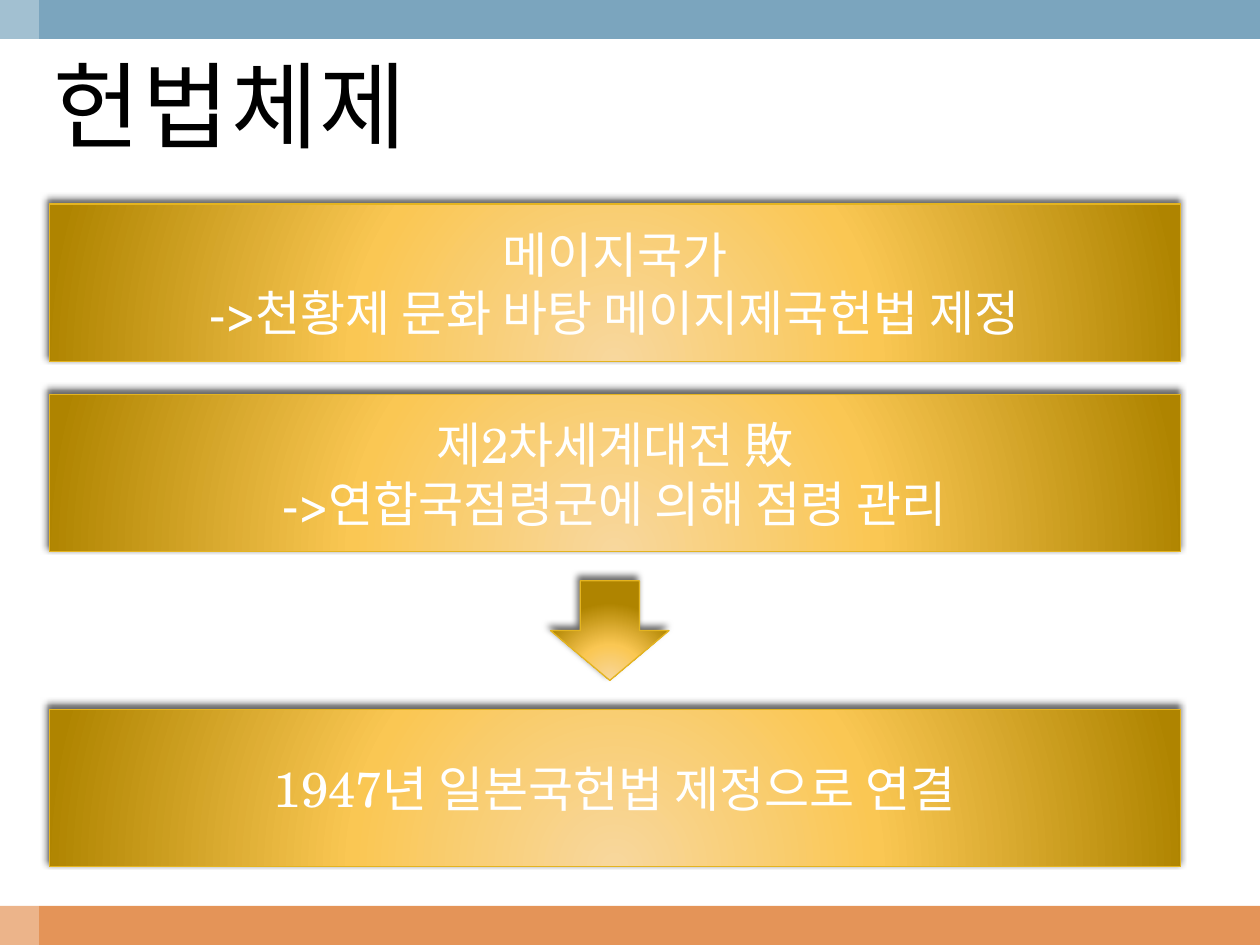
from lxml.etree import SubElement
from pptx import Presentation
from pptx.dml.color import RGBColor
from pptx.enum.shapes import MSO_SHAPE as Shape
from pptx.enum.text import MSO_ANCHOR as Anchor, PP_ALIGN as Align
from pptx.oxml import parse_xml
from pptx.oxml.ns import nsdecls, qn
from pptx.util import Inches, Pt

COLORS = {
    "top band": "7BA5BE", "bottom band": "E49458", "white": "FFFFFF",
    "title": "000000", "outline": "E4B420", "shadow": "000000",
    "glow": "F8D79D", "gold": "FAC753", "dark gold": "AF8400",
}
FONT = "TeX Gyre Schola"
COLUMNS, ROWS = 100, 75
CELL = Inches(0.1)
BAND = 3.1
PANEL_LEFT, PANEL_WIDTH, PANEL_HEIGHT = 3.9, 89.8, 12.5
PANELS = [
    (16.2, ["메이지국가", "->천황제 문화 바탕 메이지제국헌법 제정"]),
    (31.3, ["제2차세계대전 敗", "->연합국점령군에 의해 점령 관리"]),
    (56.3, ["1947년 일본국헌법 제정으로 연결"]),
]


def color(name):
    return RGBColor.from_string(COLORS[name])


def grid(*lengths):
    return [round(length * CELL) for length in lengths]


def add_band(slide, box, fill, opacity=100):
    band = slide.shapes.add_shape(Shape.RECTANGLE, *grid(*box))
    band.shadow.inherit = False
    band.fill.solid()
    band.fill.fore_color.rgb = color(fill)
    band.line.fill.background()
    if opacity < 100:
        tint = band.fill._xPr.find(".//" + qn("a:srgbClr"))
        SubElement(tint, qn("a:alpha"), val=str(opacity * 1000))


def add_golden(slide, kind, box):
    """Add a shape with a gradient rising from below its base and a soft shadow."""
    golden = slide.shapes.add_shape(kind, *grid(*box))
    golden.line.color.rgb = color("outline")
    golden.line.width = Pt(0.75)
    golden.shadow.inherit = False
    properties = golden._element.spPr
    stops = "".join(
        f'<a:gs pos="{percent * 1000}"><a:srgbClr val="{COLORS[name]}"/></a:gs>'
        for percent, name in [(0, "glow"), (46, "gold"), (100, "dark gold")])
    properties.find(qn("a:ln")).addprevious(parse_xml(
        f'<a:gradFill {nsdecls("a")} rotWithShape="1"><a:gsLst>{stops}</a:gsLst>'
        '<a:path path="circle"><a:fillToRect l="50000" t="155000" r="50000" b="-55000"/>'
        '</a:path></a:gradFill>'))
    properties.find(qn("a:effectLst")).append(parse_xml(
        f'<a:outerShdw {nsdecls("a")} blurRad="{Pt(4)}" dist="{Pt(3)}" '
        f'dir="{245 * 60000}" rotWithShape="0"><a:srgbClr val="{COLORS["shadow"]}">'
        '<a:alpha val="60000"/></a:srgbClr></a:outerShdw>'))
    return golden


def write(frame, lines, size, ink, align):
    frame.word_wrap = True
    frame.vertical_anchor = Anchor.MIDDLE
    frame.text = "\n".join(lines)
    for paragraph in frame.paragraphs:
        paragraph.alignment = align
        for run in paragraph.runs:
            run.font.name = FONT
            run.font.size = Pt(size)
            run.font.color.rgb = color(ink)


def add_title(slide, title):
    heading = slide.shapes.add_textbox(*grid(3.3, BAND, 93.6, 10.3))
    write(heading.text_frame, [title], 54, "title", Align.LEFT)
    heading.text_frame.paragraphs[0].runs[0].font._element.set("spc", "100")


def add_panel(slide, top, lines):
    panel = add_golden(slide, Shape.RECTANGLE,
                       (PANEL_LEFT, top, PANEL_WIDTH, PANEL_HEIGHT))
    write(panel.text_frame, lines, 28, "white", Align.CENTER)


def main():
    deck = Presentation()
    deck.slide_width, deck.slide_height = grid(COLUMNS, ROWS)
    slide = deck.slides.add_slide(deck.slide_layouts[6])
    add_band(slide, (0, ROWS - BAND, COLUMNS, BAND), "bottom band")
    add_band(slide, (0, 0, COLUMNS, BAND), "top band")
    add_band(slide, (0, 0, BAND, ROWS), "white", opacity=30)
    add_title(slide, "헌법체제")
    for top, lines in PANELS:
        add_panel(slide, top, lines)
    add_golden(slide, Shape.DOWN_ARROW, (43.7, 46.1, 9.4, 7.9))
    deck.save("out.pptx")


if __name__ == "__main__":
    main()
